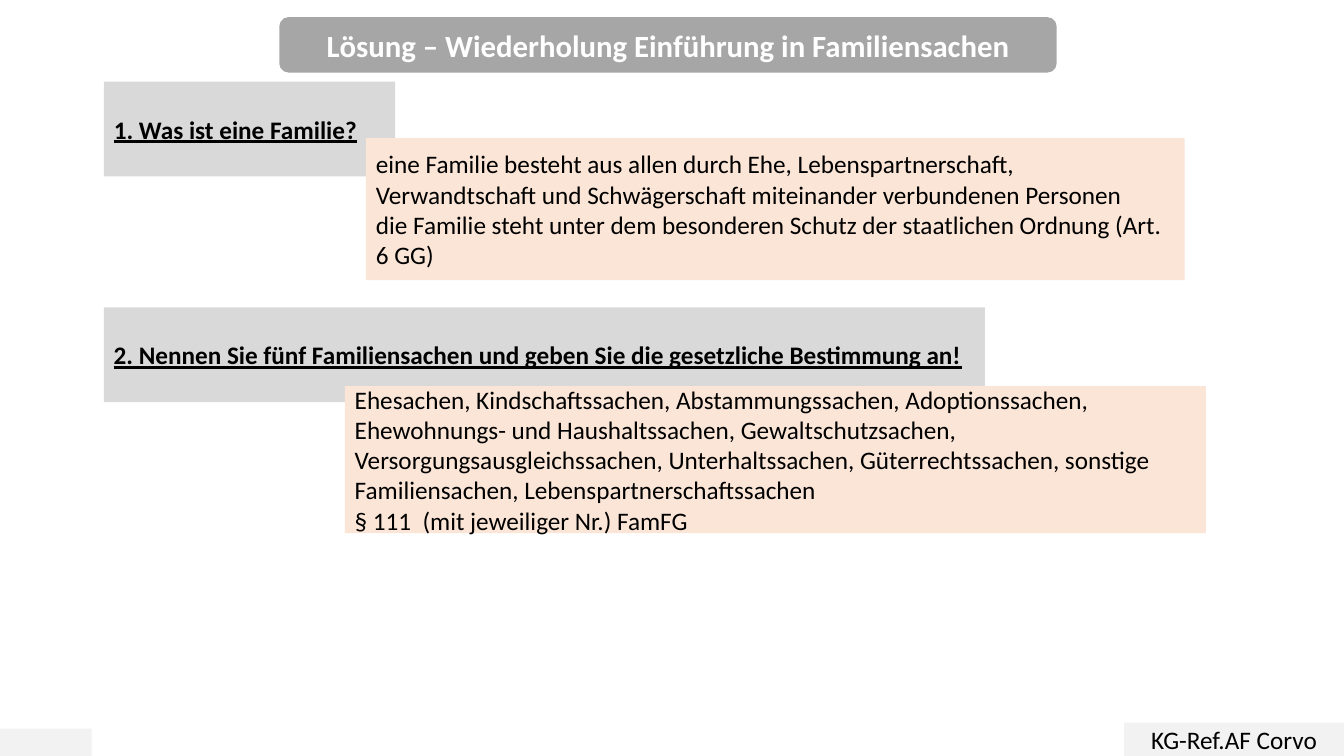
"""Build the answer slide that reviews the introduction to family matters."""
import pptx
import pptx.dml.color
import pptx.enum.shapes
import pptx.enum.text
import pptx.util

SLIDE_WIDTH, SLIDE_HEIGHT = 13.33, 7.5
QUESTION_LEFT, QUESTION_HEIGHT = 1.03, 0.94
GREY, PEACH, PALE, BANNER = "D9D9D9", "FBE5D6", "F2F2F2", "A6A6A6"
BLACK, WHITE = "000000", "FFFFFF"
SHAPE = pptx.enum.shapes.MSO_SHAPE
ALIGN = pptx.enum.text.PP_ALIGN

TITLE = "Lösung – Wiederholung Einführung in Familiensachen"
TITLE_BOX = (2.77, 0.17, 7.71, 0.55)
FOOTER = "KG-Ref.AF Corvo"
FOOTER_SIZES = {"left": (0.91, 0.27), "right": (2.18, 0.33)}
EXERCISES = [
    {
        "question": "1. Was ist eine Familie?",
        "top": 0.81,
        "width": 2.89,
        "answer": [
            "eine Familie besteht aus allen durch Ehe, Lebenspartnerschaft, "
            "Verwandtschaft und Schwägerschaft miteinander verbundenen Personen",
            "die Familie steht unter dem besonderen Schutz der staatlichen "
            "Ordnung (Art. 6 GG)",
        ],
        "answer_box": (3.63, 1.37, 8.12, 1.41),
    },
    {
        "question": "2. Nennen Sie fünf Familiensachen und geben Sie die "
                    "gesetzliche Bestimmung an!",
        "top": 3.05,
        "width": 8.74,
        "answer": [
            "Ehesachen, Kindschaftssachen, Abstammungssachen, Adoptionssachen, "
            "Ehewohnungs- und Haushaltssachen, Gewaltschutzsachen, "
            "Versorgungsausgleichssachen, Unterhaltssachen, Güterrechtssachen, "
            "sonstige Familiensachen, Lebenspartnerschaftssachen",
            "§ 111  (mit jeweiliger Nr.) FamFG",
        ],
        "answer_box": (3.42, 3.83, 8.54, 1.46),
    },
]


def rgb(value):
    """Turn a hex string into a colour."""
    return pptx.dml.color.RGBColor.from_string(value)


def write(target, lines, size=18, color=BLACK, align=ALIGN.LEFT, bold=False, underline=False):
    """Put paragraphs into a shape and format them."""
    frame = target.text_frame
    frame.text = "\n".join(lines)
    frame.word_wrap = True
    frame.auto_size = pptx.enum.text.MSO_AUTO_SIZE.NONE
    frame.vertical_anchor = pptx.enum.text.MSO_ANCHOR.MIDDLE
    for paragraph in frame.paragraphs:
        paragraph.alignment = align
        for run in paragraph.runs:
            run.font.name = "Calibri"
            run.font.size = pptx.util.Pt(size)
            run.font.bold = bold
            run.font.underline = underline
            run.font.color.rgb = rgb(color)


def add_block(slide, box, fill, kind=SHAPE.RECTANGLE):
    """Add a flat filled shape without outline."""
    block = slide.shapes.add_shape(kind, *map(pptx.util.Inches, box))
    block.shadow.inherit = False
    block.fill.solid()
    block.fill.fore_color.rgb = rgb(fill)
    block.line.fill.background()
    return block


def add_title(slide):
    """Place the title placeholder on its rounded banner."""
    banner = add_block(slide, TITLE_BOX, BANNER, SHAPE.ROUNDED_RECTANGLE)
    title = slide.shapes.title
    title.left, title.top, title.width, title.height = map(pptx.util.Inches, TITLE_BOX)
    write(title, [TITLE], size=22, color=WHITE, align=ALIGN.CENTER, bold=True)
    banner.element.addnext(title.element)


def add_footer(slide):
    """Fill both bottom corners and label the right one."""
    for side, (width, height) in FOOTER_SIZES.items():
        left = 0 if side == "left" else SLIDE_WIDTH - width
        corner = add_block(slide, (left, SLIDE_HEIGHT - height, width, height), PALE)
        if side == "right":
            write(corner, [FOOTER], align=ALIGN.CENTER)


def main():
    """Create and save the presentation."""
    deck = pptx.Presentation()
    deck.slide_width = pptx.util.Inches(SLIDE_WIDTH)
    deck.slide_height = pptx.util.Inches(SLIDE_HEIGHT)
    slide = deck.slides.add_slide(deck.slide_layouts.get_by_name("Title Only"))
    add_title(slide)
    add_footer(slide)
    for exercise in EXERCISES:
        question_box = (QUESTION_LEFT, exercise["top"], exercise["width"], QUESTION_HEIGHT)
        question = add_block(slide, question_box, GREY)
        write(question, [exercise["question"]], bold=True, underline=True)
        answer = add_block(slide, exercise["answer_box"], PEACH)
        write(answer, exercise["answer"])
    deck.save("out.pptx")


if __name__ == "__main__":
    main()
